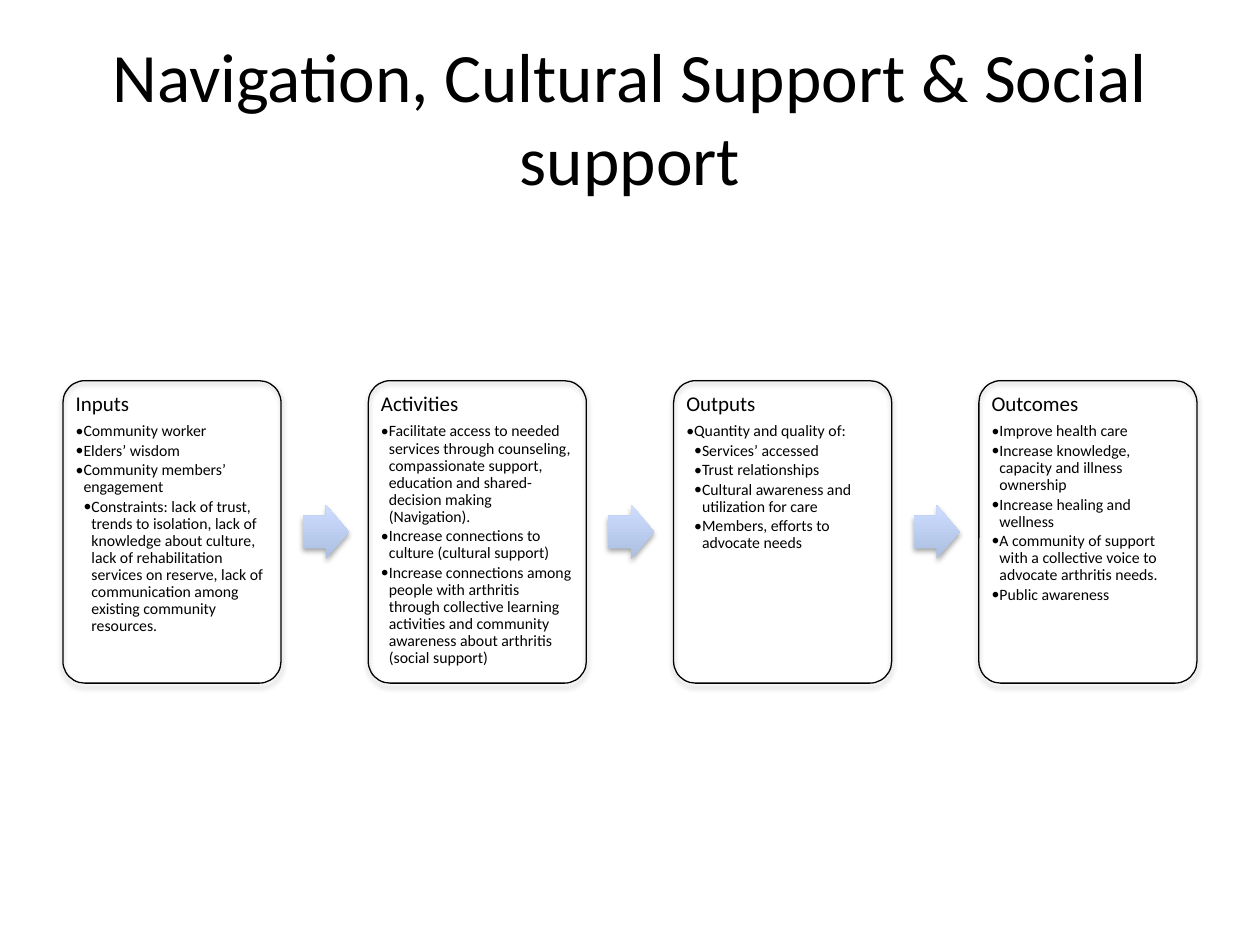
"""Build a logic-model slide with four cards joined by arrows."""
from dataclasses import dataclass

from pptx import Presentation
from pptx.dml.color import RGBColor
from pptx.enum.shapes import MSO_SHAPE as Shape
from pptx.enum.text import MSO_ANCHOR as Anchor, MSO_AUTO_SIZE as AutoSize, PP_ALIGN as Align
from pptx.oxml.ns import qn
from pptx.util import Pt
from lxml.etree import SubElement

FONT = "Calibri"
BLACK = "000000"
ARROW_DARK, ARROW_LIGHT = "ADBFE1", "CCDDFF"
LEFT, RIGHT = 36, 684
CARD_TOP, CARD_WIDTH, CARD_HEIGHT = 217.6, 124.6, 172.8
ARROW_WIDTH, ARROW_HEIGHT = 26.4, 30.9
INSET = 3.65
HANG = 4.5


@dataclass
class Bullet:
    text: str
    level: int = 1


@dataclass
class Card:
    heading: str
    bullets: list[Bullet]


CARDS = [
    Card("Inputs", [
        Bullet("Community worker"),
        Bullet("Elders’ wisdom"),
        Bullet("Community members’ engagement"),
        Bullet("Constraints: lack of trust, trends to isolation, lack of knowledge about "
               "culture, lack of rehabilitation services on reserve, lack of communication "
               "among existing community resources.", 2),
    ]),
    Card("Activities", [
        Bullet("Facilitate access to needed services through counseling, compassionate "
               "support, education and shared-decision making (Navigation)."),
        Bullet("Increase connections to culture (cultural support)"),
        Bullet("Increase connections among people with arthritis through collective learning "
               "activities and community awareness about arthritis (social support)"),
    ]),
    Card("Outputs", [
        Bullet("Quantity and quality of:"),
        Bullet("Services’ accessed", 2),
        Bullet("Trust relationships", 2),
        Bullet("Cultural awareness and utilization for care", 2),
        Bullet("Members, efforts to advocate needs", 2),
    ]),
    Card("Outcomes", [
        Bullet("Improve health care"),
        Bullet("Increase knowledge, capacity and illness ownership"),
        Bullet("Increase healing and wellness"),
        Bullet("A community of support with a collective voice to advocate arthritis needs."),
        Bullet("Public awareness"),
    ]),
]


def color(value: str) -> RGBColor:
    """Turn a hex string into a colour."""
    return RGBColor.from_string(value)


def add_span(para, text: str, size: float) -> None:
    """Add one formatted run to a paragraph."""
    span = para.add_run()
    span.text = text
    span.font.name = FONT
    span.font.size = Pt(size)
    span.font.color.rgb = color(BLACK)


def add_shadow(shape) -> None:
    """Give a shape a soft shadow that falls straight down."""
    shape.shadow.inherit = False
    effects = shape._element.spPr.find(qn("a:effectLst"))
    outer = SubElement(effects, qn("a:outerShdw"), blurRad=str(Pt(3.1)),
                       dist=str(Pt(1.8)), dir="5400000", rotWithShape="0")
    tint = SubElement(outer, qn("a:srgbClr"), val=BLACK)
    SubElement(tint, qn("a:alpha"), val="35000")


def format_para(para, gap: float, level: int = 0) -> None:
    """Set spacing, and a hanging bullet on levels above zero."""
    para.alignment = Align.LEFT
    para.line_spacing = 0.9
    para.space_after = Pt(gap)
    if level:
        para.level = level
        props = para._p.get_or_add_pPr()
        props.set("marL", str(Pt(HANG * level)))
        props.set("indent", str(-Pt(HANG)))
        SubElement(props, qn("a:buFont"), typeface=FONT)
        SubElement(props, qn("a:buChar"), char="•")


def draw_card(page, card: Card, left: float) -> None:
    """Draw a rounded outline and the card's text inside it."""
    outline = page.shapes.add_shape(Shape.ROUNDED_RECTANGLE, Pt(left), Pt(CARD_TOP),
                                    Pt(CARD_WIDTH), Pt(CARD_HEIGHT))
    outline.adjustments[0] = 0.1
    outline.fill.background()
    outline.line.color.rgb = color(BLACK)
    outline.line.width = Pt(0.75)
    add_shadow(outline)
    box = page.shapes.add_textbox(Pt(left + INSET), Pt(CARD_TOP + INSET),
                                  Pt(CARD_WIDTH - 2 * INSET), Pt(CARD_HEIGHT - 2 * INSET))
    frame = box.text_frame
    frame.word_wrap = True
    frame.vertical_anchor = Anchor.TOP
    frame.margin_left = frame.margin_right = Pt(3.6)
    frame.margin_top = frame.margin_bottom = Pt(3.6)
    heading = frame.paragraphs[0]
    format_para(heading, 4.2)
    add_span(heading, card.heading, 12)
    for bullet in card.bullets:
        para = frame.add_paragraph()
        format_para(para, 1.35, bullet.level)
        add_span(para, bullet.text, 9)


def draw_arrow(page, left: float) -> None:
    """Draw a gradient arrow level with the middle of the cards."""
    top = CARD_TOP + (CARD_HEIGHT - ARROW_HEIGHT) / 2
    arrow = page.shapes.add_shape(Shape.RIGHT_ARROW, Pt(left), Pt(top),
                                  Pt(ARROW_WIDTH), Pt(ARROW_HEIGHT))
    arrow.adjustments[0] = 0.6
    arrow.adjustments[1] = 0.5
    arrow.fill.gradient()
    arrow.fill.gradient_angle = 90
    for stop, shade in zip(arrow.fill.gradient_stops, (ARROW_DARK, ARROW_LIGHT)):
        stop.color.rgb = color(shade)
    arrow.line.fill.background()
    add_shadow(arrow)


def draw_title(page, text: str) -> None:
    """Place and format the title placeholder."""
    title = page.shapes.title
    title.left, title.top, title.width, title.height = Pt(36), Pt(21.6), Pt(648), Pt(90)
    frame = title.text_frame
    frame.word_wrap = True
    frame.auto_size = AutoSize.NONE
    frame.vertical_anchor = Anchor.MIDDLE
    para = frame.paragraphs[0]
    para.alignment = Align.CENTER
    add_span(para, text, 39.6)


def main() -> None:
    """Build and save the deck."""
    deck = Presentation()
    deck.slide_width, deck.slide_height = Pt(720), Pt(540)
    page = deck.slides.add_slide(deck.slide_layouts[5])
    draw_title(page, "Navigation, Cultural Support & Social support")
    step = (RIGHT - LEFT - CARD_WIDTH) / (len(CARDS) - 1)
    for index, card in enumerate(CARDS):
        left = LEFT + index * step
        if index:
            draw_arrow(page, left - step + 1.1 * CARD_WIDTH)
        draw_card(page, card, left)
    deck.save("out.pptx")


if __name__ == "__main__":
    main()
